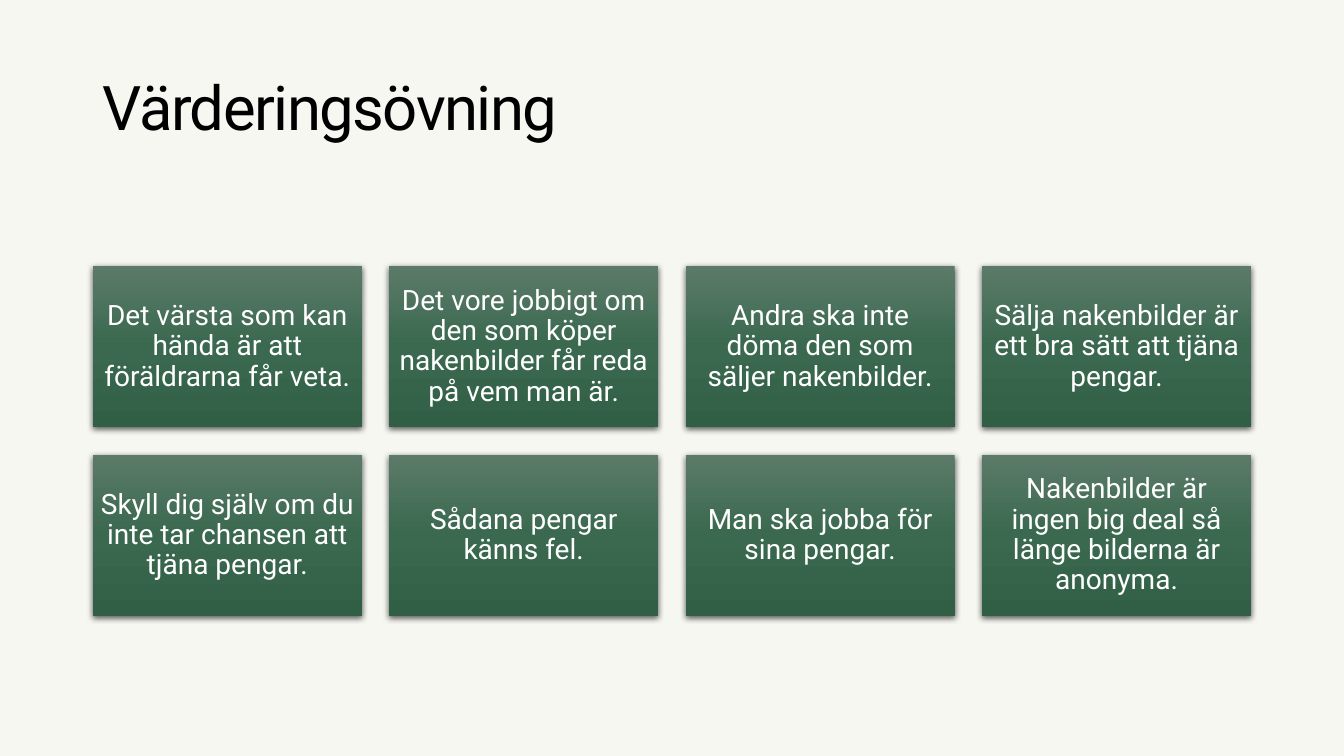
import pptx
import pptx.dml.color
import pptx.enum.shapes
import pptx.enum.text
import pptx.oxml
import pptx.oxml.ns
import pptx.util

COLOURS = {
    "background": "F7F7F2",
    "title": "000000",
    "card_text": "FFFFFF",
    "card_top": "5B7A68",
    "card_middle": "3A694F",
    "card_bottom": "315F46",
    "shadow": "000000",
}

STATEMENTS = [
    "Det värsta som kan hända är att föräldrarna får veta.",
    "Det vore jobbigt om den som köper nakenbilder får reda på vem man är.",
    "Andra ska inte döma den som säljer nakenbilder.",
    "Sälja nakenbilder är ett bra sätt att tjäna pengar.",
    "Skyll dig själv om du inte tar chansen att tjäna pengar.",
    "Sådana pengar känns fel.",
    "Man ska jobba för sina pengar.",
    "Nakenbilder är ingen big deal så länge bilderna är anonyma.",
]


def colour(name):
    return pptx.dml.color.RGBColor.from_string(COLOURS[name])


def apply(target, formats):
    for name, value in formats.items():
        setattr(target, name, value)


class Board:
    """Style, card grid and current slide."""

    font = "Roboto"
    left, top = 0.92, 2.64
    card_width, card_height, gap = 2.67, 1.6, 0.27
    columns = 4

    def __init__(self, deck):
        self.slide = deck.slides.add_slide(deck.slide_layouts[5])
        fill = self.slide.background.fill
        fill.solid()
        fill.fore_color.rgb = colour("background")

    def place(self, left, top, width, height):
        return [pptx.util.Inches(n) for n in (left, top, width, height)]

    def set_text(self, shape, words, size, ink, alignment, spacing, inset_x, inset_y):
        frame = shape.text_frame
        apply(frame, {
            "word_wrap": True,
            "auto_size": pptx.enum.text.MSO_AUTO_SIZE.NONE,
            "vertical_anchor": pptx.enum.text.MSO_ANCHOR.MIDDLE,
            "margin_left": pptx.util.Inches(inset_x),
            "margin_right": pptx.util.Inches(inset_x),
            "margin_top": pptx.util.Inches(inset_y),
            "margin_bottom": pptx.util.Inches(inset_y),
        })
        paragraph = frame.paragraphs[0]
        apply(paragraph, {"alignment": alignment, "line_spacing": spacing})
        run = paragraph.add_run()
        run.text = words
        apply(run.font, {"name": self.font, "size": pptx.util.Pt(size)})
        run.font.color.rgb = colour(ink)
        return run

    def title(self, words):
        heading = self.slide.shapes.title
        names = ("left", "top", "width", "height")
        apply(heading, dict(zip(names, self.place(self.left, 0.4, 11.5, 1.45))))
        run = self.set_text(heading, words, 44, "title",
                            pptx.enum.text.PP_ALIGN.LEFT, 0.75, 0.1, 0.05)
        # Tighter letters, in hundredths of a point
        run._r.get_or_add_rPr().set("spc", "-110")

    def card(self, index, words):
        row, column = divmod(index, self.columns)
        box = self.place(self.left + column * (self.card_width + self.gap),
                         self.top + row * (self.card_height + self.gap),
                         self.card_width, self.card_height)
        card = self.slide.shapes.add_shape(pptx.enum.shapes.MSO_SHAPE.RECTANGLE, *box)
        card.line.fill.background()
        self.shade(card)
        self.cast_shadow(card)
        self.set_text(card, words, 20, "card_text",
                      pptx.enum.text.PP_ALIGN.CENTER, 0.9, 0.08, 0.08)

    def shade(self, card):
        # Three stops, running from top to bottom
        card.fill.gradient()
        card.fill.gradient_angle = 270
        stops = card._element.spPr.find(".//" + pptx.oxml.ns.qn("a:gsLst"))
        for stop in list(stops):
            stops.remove(stop)
        for position, name in ((0, "card_top"), (50, "card_middle"), (100, "card_bottom")):
            stops.append(pptx.oxml.parse_xml(
                f'<a:gs {pptx.oxml.ns.nsdecls("a")} pos="{position * 1000}">'
                f'<a:srgbClr val="{COLOURS[name]}"/></a:gs>'))

    def cast_shadow(self, card):
        card.shadow.inherit = False
        effects = card._element.spPr.find(pptx.oxml.ns.qn("a:effectLst"))
        effects.append(pptx.oxml.parse_xml(
            f'<a:outerShdw {pptx.oxml.ns.nsdecls("a")} blurRad="{pptx.util.Pt(4.5)}" '
            f'dist="{pptx.util.Pt(1.5)}" dir="5400000" algn="ctr" rotWithShape="0">'
            f'<a:srgbClr val="{COLOURS["shadow"]}"><a:alpha val="63000"/></a:srgbClr>'
            '</a:outerShdw>'))


def main():
    deck = pptx.Presentation()
    apply(deck, {"slide_width": pptx.util.Inches(13.33),
                 "slide_height": pptx.util.Inches(7.5)})
    board = Board(deck)

    # Heading
    board.title("Värderingsövning")

    # Statement cards, row by row
    for index, statement in enumerate(STATEMENTS):
        board.card(index, statement)

    deck.save("out.pptx")


if __name__ == "__main__":
    main()
